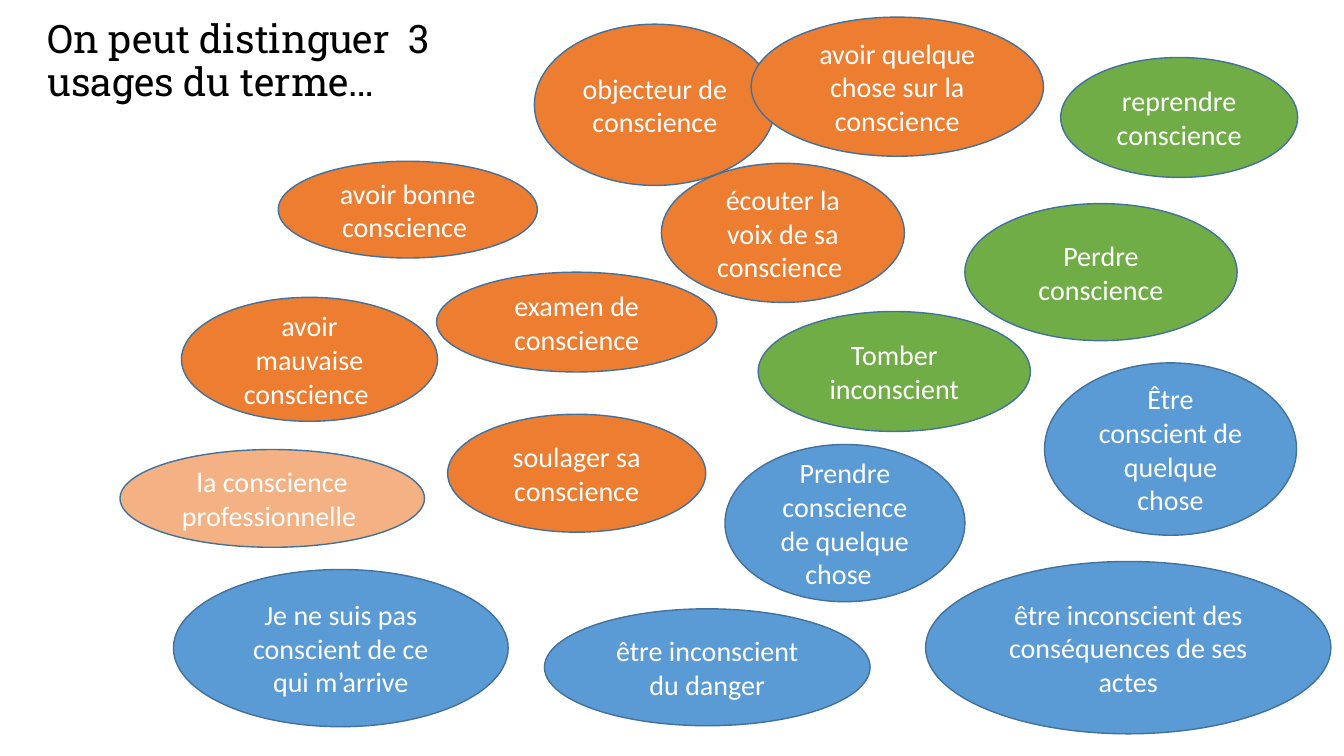
from pptx import Presentation
from pptx.dml.color import RGBColor
from pptx.enum.shapes import MSO_SHAPE
from pptx.enum.text import MSO_ANCHOR, PP_ALIGN
from pptx.util import Emu, Pt

OVAL = MSO_SHAPE.OVAL
MIDDLE, TOP = MSO_ANCHOR.MIDDLE, MSO_ANCHOR.TOP
CENTER, LEFT = PP_ALIGN.CENTER, PP_ALIGN.LEFT

EMU_PER_PX = 9144  # 100 px to the inch
COLORS = {
    "moral": "ED7D31",
    "professional": "F4B183",
    "awake": "70AD47",
    "aware": "5B9BD5",
    "outline": "41719C",
    "bubble_text": "FFFFFF",
    "title": "000000",
}

# usage, left, top, width, height, expression; from back to front
EXPRESSIONS = [
    ("aware", 172, 565, 332, 156, "Je ne suis pas conscient de ce qui m’arrive"),
    ("awake", 1052, 57, 235, 119, "reprendre conscience"),
    ("aware", 918, 557, 402, 171, "être inconscient des conséquences de ses actes"),
    ("professional", 119, 446, 302, 97, "la conscience professionnelle "),
    ("moral", 444, 411, 256, 117, "soulager sa conscience"),
    ("moral", 530, 24, 239, 160, "objecteur de conscience"),
    ("moral", 180, 295, 254, 123, "avoir mauvaise conscience "),
    ("moral", 276, 160, 257, 96, "avoir bonne conscience "),
    ("moral", 745, 17, 290, 138, "avoir quelque chose sur la conscience"),
    ("awake", 957, 202, 270, 136, "Perdre conscience"),
    ("awake", 752, 309, 270, 119, "Tomber inconscient"),
    ("aware", 719, 441, 238, 156, "Prendre conscience de quelque chose  "),
    ("moral", 433, 270, 278, 99, "examen de conscience"),
    ("moral", 656, 162, 241, 138, "écouter la voix de sa conscience "),
    ("aware", 1036, 360, 250, 171, "Être conscient de quelque chose"),
    ("aware", 540, 604, 323, 116, "être inconscient du danger"),
]


def px(length):
    return Emu(length * EMU_PER_PX)


def color(key):
    return RGBColor.from_string(COLORS[key])


def write(shape, text, font, size, color_key, align, anchor):
    frame = shape.text_frame
    frame.word_wrap = True
    frame.vertical_anchor = anchor
    paragraph = frame.paragraphs[0]
    paragraph.alignment = align
    run = paragraph.add_run()
    run.text = text
    run.font.name = font
    run.font.size = Pt(size)
    run.font.color.rgb = color(color_key)
    return frame


def add_bubble(slide, usage, left, top, width, height, expression):
    bubble = slide.shapes.add_shape(OVAL, px(left), px(top), px(width), px(height))
    bubble.shadow.inherit = False
    bubble.fill.solid()
    bubble.fill.fore_color.rgb = color(usage)
    bubble.line.color.rgb = color("outline")
    bubble.line.width = Pt(1)
    write(bubble, expression, "Calibri", 20, "bubble_text", CENTER, MIDDLE)


def add_title(slide, text):
    title = slide.shapes.add_textbox(px(37), px(15), px(531), px(104))
    frame = write(title, text, "Roboto Slab", 28, "title", LEFT, TOP)
    frame.margin_right = px(60)  # wraps the title after the number
    frame.paragraphs[0].line_spacing = 0.9


def main():
    deck = Presentation()
    deck.slide_width, deck.slide_height = px(1333), px(750)
    slide = deck.slides.add_slide(deck.slide_layouts[6])

    # Expressions, coloured by usage
    for expression in EXPRESSIONS:
        add_bubble(slide, *expression)

    # Title
    add_title(slide, "On peut distinguer  3 usages du terme…")

    deck.save("out.pptx")


if __name__ == "__main__":
    main()
